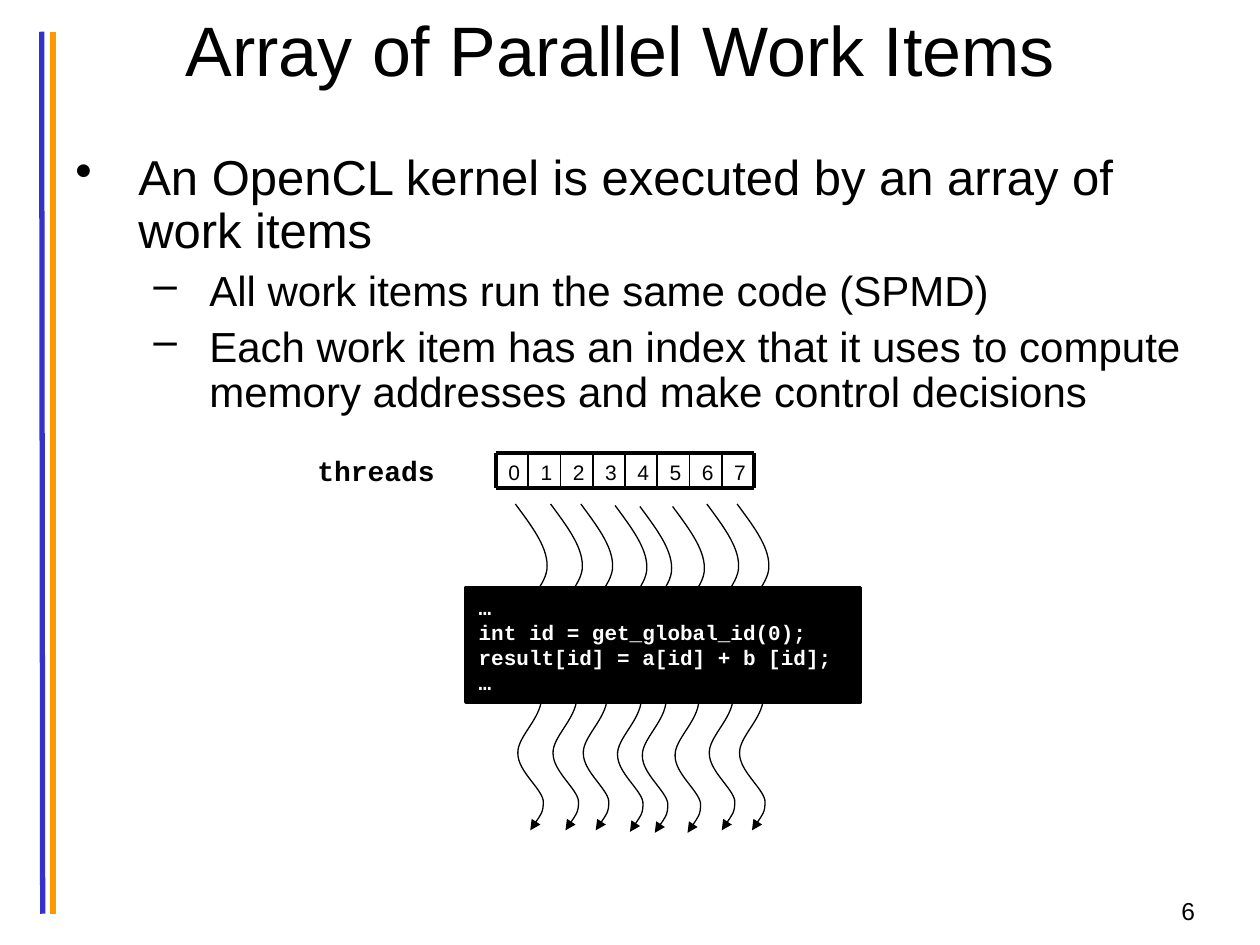
"""Build the slide on parallel work items with its thread diagram."""
from lxml import etree
from pptx import Presentation
from pptx import util as u
from pptx.dml.color import RGBColor
from pptx.enum import shapes, text
from pptx.oxml import ns

BLACK = RGBColor(0x00, 0x00, 0x00)
WHITE = RGBColor(0xFF, 0xFF, 0xFF)
BLUE = RGBColor(0x33, 0x33, 0xCC)
ORANGE = RGBColor(0xFF, 0x99, 0x00)


def write(box, lines, formats, anchor=text.MSO_ANCHOR.TOP, color=BLACK):
    frame = box.text_frame
    frame.word_wrap = True
    frame.vertical_anchor = anchor
    frame.text = "\n".join(lines)
    for para in frame.paragraphs:
        para.alignment = text.PP_ALIGN.LEFT
        for span in para.runs:
            span.font.color.rgb = color
            for name, value in formats.items():
                setattr(span.font, name, value)
    return frame.paragraphs


def draw_line(left, top, right, bottom, color, width):
    line = page.shapes.add_connector(
        shapes.MSO_CONNECTOR.STRAIGHT, u.Cm(left), u.Cm(top), u.Cm(right), u.Cm(bottom))
    line.line.color.rgb = color
    line.line.width = u.Pt(width)
    etree.SubElement(line._element.spPr, ns.qn("a:effectLst"))


deck = Presentation()
deck.slide_width, deck.slide_height = u.Cm(25.4), u.Cm(19.05)
page = deck.slides.add_slide(deck.slide_layouts[6])

draw_line(0.84, 0.64, 0.86, 18.42, BLUE, 3)
draw_line(1.07, 0.64, 1.07, 18.42, ORANGE, 3)

number = page.shapes.add_textbox(u.Cm(18.42), u.Cm(17.93), u.Cm(5.92), u.Cm(1.32))
write(number, ["6"], {"name": "Arial", "size": u.Pt(14)})[0].alignment = text.PP_ALIGN.RIGHT

title = page.shapes.add_textbox(u.Cm(1.17), u.Cm(0), u.Cm(23.06), u.Cm(1.96))
heading = write(title, ["Array of Parallel Work Items "],
                {"name": "Arial", "size": u.Pt(40)}, text.MSO_ANCHOR.BOTTOM)
heading[0].alignment = text.PP_ALIGN.CENTER

body = page.shapes.add_textbox(u.Cm(1.27), u.Cm(2.97), u.Cm(23.06), u.Cm(14.76))
points = write(body, [
    "An OpenCL kernel is executed by an array of work items",
    "All work items run the same code (SPMD)",
    "Each work item has an index that it uses to compute memory addresses and make control decisions",
], {"name": "Arial"})
LEVELS = [
    {"size": 28, "before": 7, "margin": 1.27, "hanging": 1.27, "bullet": "•"},
    {"size": 24, "before": 6, "margin": 2.7, "hanging": 1.12, "bullet": "–"},
]
for para, level in zip(points, (0, 1, 1)):
    style = LEVELS[level]
    para.level = level
    para.line_spacing = 0.9
    para.space_before = u.Pt(style["before"])
    para.runs[0].font.size = u.Pt(style["size"])
    properties = para._p.get_or_add_pPr()
    properties.set("marL", str(u.Cm(style["margin"])))
    properties.set("indent", str(-u.Cm(style["hanging"])))
    etree.SubElement(properties, ns.qn("a:buChar"), char=style["bullet"])

THREADS = 8
ROW_LEFT, ROW_TOP, ROW_BOTTOM, CELL = 10, 9.14, 9.83, 0.65
ROW_RIGHT = ROW_LEFT + THREADS * CELL
for index in range(THREADS):
    cell = page.shapes.add_textbox(u.Cm(ROW_LEFT + index * CELL), u.Cm(ROW_TOP),
                                   u.Cm(CELL), u.Cm(ROW_BOTTOM - ROW_TOP))
    label = write(cell, [str(index)], {"name": "Arial", "size": u.Pt(12)})
    label[0].space_before = u.Pt(3)
for edge in (ROW_TOP, ROW_BOTTOM):
    draw_line(ROW_LEFT, edge, ROW_RIGHT, edge, BLACK, 2.25)
for index in range(THREADS + 1):
    side = ROW_LEFT + index * CELL
    draw_line(side, ROW_TOP, side, ROW_BOTTOM, BLACK, 2.25 if index in (0, THREADS) else 1)

WAVE = [(30, 41), (64, 84), (64, 124), (66, 165), (10, 203), (8, 249),
        (8, 292), (53, 348), (53, 391), (51, 434), (3, 470), (5, 503),
        (5, 538), (51, 572), (56, 597), (58, 622), (36, 648), (30, 658)]
STARTS = [(1039, 1016), (1110, 1016), (1171, 1016), (1240, 1019),
          (1290, 1021), (1356, 1021), (1425, 1016), (1486, 1016)]
for left, top in STARTS:
    builder = page.shapes.build_freeform(left, top, scale=u.Cm(0.01))
    builder.add_line_segments([(left + x, top + y) for x, y in WAVE], close=False)
    wave = builder.convert_to_shape()
    wave.shadow.inherit = False
    wave.fill.background()
    wave.line.color.rgb = BLACK
    wave.line.width = u.Pt(0.75)
    etree.SubElement(wave.line._get_or_add_ln(), ns.qn("a:tailEnd"), type="triangle")
    segments = list(wave._element.iter(ns.qn("a:lnTo")))
    outline = segments[0].getparent()
    for first in range(0, len(segments), 3):
        curve = etree.SubElement(outline, ns.qn("a:cubicBezTo"))
        for segment in segments[first:first + 3]:
            curve.append(segment[0])
            outline.remove(segment)

code = page.shapes.add_shape(shapes.MSO_SHAPE.RECTANGLE,
                             u.Cm(9.4), u.Cm(11.84), u.Cm(7.95), u.Cm(2.31))
code.shadow.inherit = False
code.fill.solid()
code.fill.fore_color.rgb = BLACK
code.line.color.rgb = BLACK
code.line.width = u.Pt(2)
write(code, ["…", "int id = get_global_id(0);", "result[id] = a[id] + b [id];", "…"],
      {"name": "Courier New", "size": u.Pt(12), "bold": True},
      text.MSO_ANCHOR.MIDDLE, WHITE)

caption = page.shapes.add_textbox(u.Cm(6.15), u.Cm(9.02), u.Cm(3.94), u.Cm(0.94))
write(caption, ["threads"], {"name": "Courier New", "size": u.Pt(16), "bold": True})

deck.save("out.pptx")
